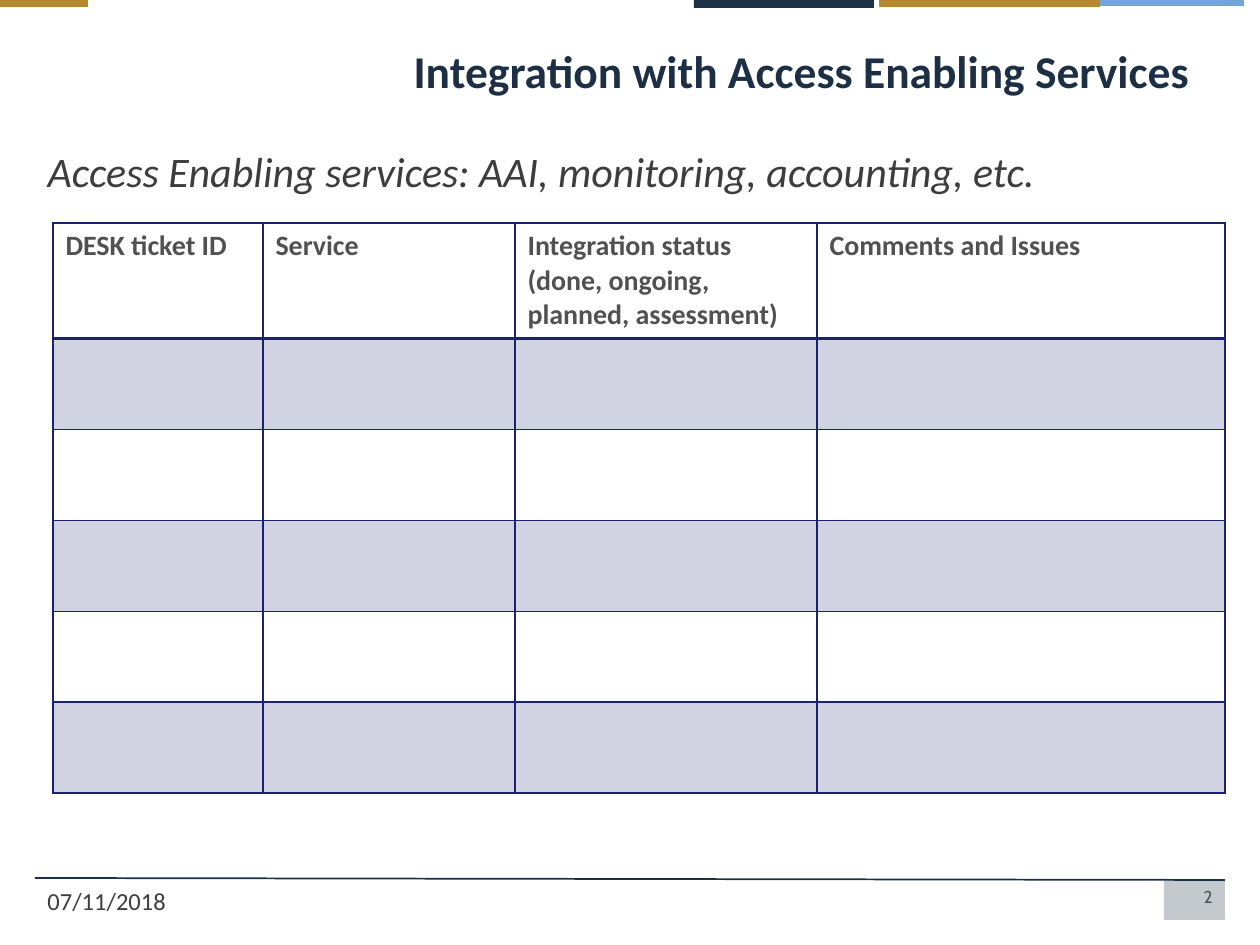
"""Build the slide on integration with access enabling services."""
from lxml import etree
from pptx import Presentation
from pptx import util as u
from pptx.dml.color import RGBColor
from pptx.enum import shapes, text
from pptx.oxml import ns

EMU_PER_PX = 914400 / 126
NAVY, GOLD, SKY, INDIGO = "1D2F45", "B5892D", "75A5D8", "1B216E"
DARK, GREY = "3D3D3D", "515151"


def px(length):
    return u.Emu(round(length * EMU_PER_PX))


def rgb(value):
    return RGBColor.from_string(value)


class Deck:
    def __init__(self, width, height):
        self.prs = Presentation()
        self.prs.slide_width, self.prs.slide_height = px(width), px(height)
        self.slide = self.prs.slides.add_slide(self.prs.slide_layouts[1])

    def paint(self, fill, color, opacity=100):
        fill.solid()
        fill.fore_color.rgb = rgb(color)
        if opacity < 100:
            srgb = fill._xPr.find(".//" + ns.qn("a:srgbClr"))
            etree.SubElement(srgb, ns.qn("a:alpha"), val=str(opacity * 1000))

    def fill_text(self, frame, words, size, color, font="Calibri", bold=False,
                  italic=False, align=text.PP_ALIGN.LEFT):
        frame.text = words
        paragraph = frame.paragraphs[0]
        paragraph.alignment = align
        for run in paragraph.runs:
            run.font.name, run.font.size = font, u.Pt(size)
            run.font.bold, run.font.italic = bold, italic
            run.font.color.rgb = rgb(color)

    def placeholder(self, index, box, words, size, color, anchor, **style):
        holder = self.slide.placeholders[index]
        holder.left, holder.top, holder.width, holder.height = map(px, box)
        frame = holder.text_frame
        frame.word_wrap, frame.auto_size = True, text.MSO_AUTO_SIZE.NONE
        frame.vertical_anchor = anchor
        self.fill_text(frame, words, size, color, **style)
        paragraph = frame.paragraphs[0]
        paragraph.space_before = u.Pt(0)
        props = paragraph._p.get_or_add_pPr()
        props.set("marL", "0")
        props.set("indent", "0")
        etree.SubElement(props, ns.qn("a:buNone"))

    def label(self, box, words, size, color, **style):
        frame = self.slide.shapes.add_textbox(*map(px, box)).text_frame
        frame.word_wrap = True
        self.fill_text(frame, words, size, color, **style)

    def bar(self, box, color, opacity=100):
        bar = self.slide.shapes.add_shape(shapes.MSO_SHAPE.RECTANGLE, *map(px, box))
        bar.shadow.inherit = False
        self.paint(bar.fill, color, opacity)
        bar.line.fill.background()

    def rule(self, ends, color, width):
        rule = self.slide.shapes.add_connector(shapes.MSO_CONNECTOR.STRAIGHT, *map(px, ends))
        rule.line.color.rgb, rule.line.width = rgb(color), u.Pt(width)
        etree.SubElement(rule._element.spPr, ns.qn("a:effectLst"))

    def border(self, cell, color, **widths):
        props = cell._tc.get_or_add_tcPr()
        for position, side in enumerate("LRTB"):
            line = etree.Element(ns.qn(f"a:ln{side}"), w=str(int(u.Pt(widths.get(side, 1)))))
            fill = etree.SubElement(line, ns.qn("a:solidFill"))
            etree.SubElement(fill, ns.qn("a:srgbClr"), val=color)
            props.insert(position, line)

    def table(self, left, top, widths, heights, headings):
        grid = self.slide.shapes.add_table(
            len(heights), len(widths), px(left), px(top),
            px(sum(widths)), px(sum(heights))).table
        grid.first_row = grid.horz_banding = False
        for column, width in zip(grid.columns, widths):
            column.width = px(width)
        for index, (row, height) in enumerate(zip(grid.rows, heights)):
            row.height = px(height)
            for cell in row.cells:
                if index % 2:
                    self.paint(cell.fill, INDIGO, 20)
                else:
                    cell.fill.background()
                self.border(cell, INDIGO, T=2 if index == 1 else 1,
                            B=2 if index == 0 else 1)
        for cell, heading in zip(grid.rows[0].cells, headings):
            self.fill_text(cell.text_frame, heading, 16, GREY, bold=True)


def main():
    deck = Deck(1260, 945)
    deck.rule((1225, 880, 35, 878), NAVY, 1)
    deck.bar((1164, 880, 61, 40), NAVY, 26)
    for left, width, height, color in (
            (694, 180, 8, "1C3046"), (1086, 158, 6, SKY),
            (879, 221, 7, GOLD), (0, 88, 7, GOLD)):
        deck.bar((left, 0, width, height), color)
    deck.placeholder(0, (401, 35, 824, 70), "Integration with Access Enabling Services",
                     26, NAVY, text.MSO_ANCHOR.MIDDLE, bold=True)
    deck.placeholder(1, (35, 139, 1190, 103),
                     "Access Enabling services: AAI, monitoring, accounting, etc.",
                     24, DARK, text.MSO_ANCHOR.TOP, italic=True)
    deck.table(53, 223, (210, 252, 302, 408), (115,) + (91,) * 5,
               ("DESK ticket ID", "Service",
                "Integration status (done, ongoing, planned, assessment)",
                "Comments and Issues"))
    deck.label((35, 880, 294, 39), "07/11/2018", 14, DARK)
    deck.label((903, 880, 322, 39), "2", 9.8, GREY, font="Cabin",
               align=text.PP_ALIGN.RIGHT)
    deck.prs.save("out.pptx")


if __name__ == "__main__":
    main()
